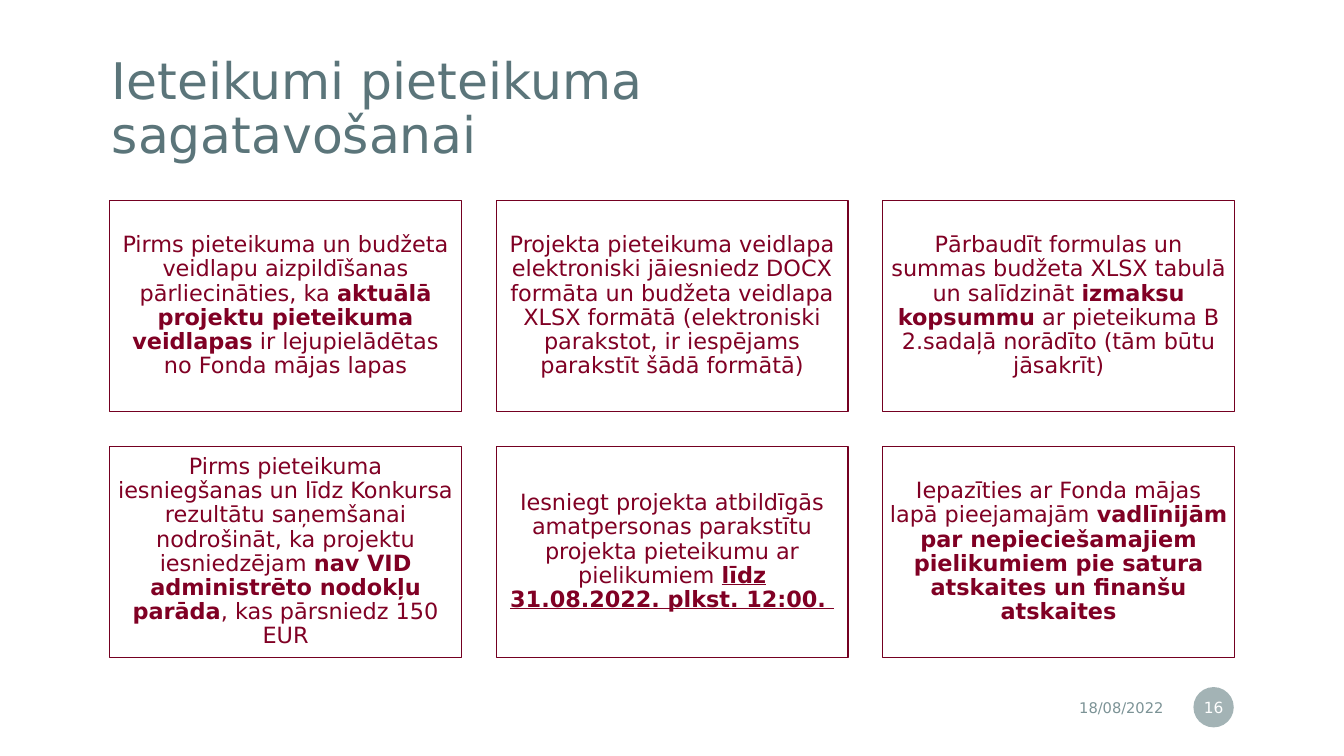
"""Build the slide of recommendations for preparing an application."""
import lxml.etree
import pptx
import pptx.dml.color
import pptx.enum.shapes
import pptx.enum.text
import pptx.oxml.ns
import pptx.util

Pt = pptx.util.Pt
ALIGN = pptx.enum.text.PP_ALIGN
SHAPES = pptx.enum.shapes.MSO_SHAPE
COLOURS = {
    "title": "5B757A",
    "footer": "7C9396",
    "card": "FFFFFF",
    "border": "740021",
    "text": "800024",
    "number": "FFFFFF",
}
CARD_LEFT, CARD_TOP = 78.4, 143.2
CARD_WIDTH, CARD_HEIGHT = 251.2, 150.7
COLUMN_STEP, ROW_STEP = 276.1, 175.7
COLUMNS = 3
CARDS = [
    [("Pirms pieteikuma un budžeta veidlapu aizpildīšanas pārliecināties, ka ", ""),
     ("aktuālā projektu pieteikuma veidlapas", "b"),
     (" ir lejupielādētas no Fonda mājas lapas", "")],
    [("Projekta pieteikuma veidlapa elektroniski jāiesniedz DOCX formāta un budžeta "
      "veidlapa XLSX formātā (elektroniski parakstot, ir iespējams parakstīt šādā "
      "formātā)", "")],
    [("Pārbaudīt formulas un summas budžeta XLSX tabulā un salīdzināt ", ""),
     ("izmaksu kopsummu", "b"),
     (" ar pieteikuma B 2.sadaļā norādīto (tām būtu jāsakrīt)", "")],
    [("Pirms pieteikuma iesniegšanas un līdz Konkursa rezultātu saņemšanai nodrošināt, "
      "ka projektu iesniedzējam ", ""),
     ("nav VID administrēto nodokļu parāda", "b"),
     (", kas pārsniedz 150 EUR", "")],
    [("Iesniegt projekta atbildīgās amatpersonas parakstītu projekta pieteikumu ar "
      "pielikumiem ", ""),
     ("līdz 31.08.2022. plkst. 12:00. ", "bu")],
    [("Iepazīties ar Fonda mājas lapā pieejamajām ", ""),
     ("vadlīnijām par nepieciešamajiem pielikumiem pie satura atskaites un finanšu "
      "atskaites", "b")],
]


def colour(name):
    return pptx.dml.color.RGBColor.from_string(COLOURS[name])


def write(box, spans, size, ink, align, insets, spacing=1.0):
    frame = box.text_frame
    frame.word_wrap = True
    frame.vertical_anchor = pptx.enum.text.MSO_ANCHOR.MIDDLE
    frame.margin_left = frame.margin_right = Pt(insets[0])
    frame.margin_top = frame.margin_bottom = Pt(insets[1])
    para = frame.paragraphs[0]
    para.alignment = align
    para.line_spacing = spacing
    para.font.name = "DejaVu Sans"
    para.font.size = Pt(size)
    para.font.color.rgb = colour(ink)
    for text, style in spans:
        span = para.add_run()
        span.text = text
        if "b" in style:
            span.font.bold = True
        if "u" in style:
            span.font.underline = True


def add_label(page, place, text, size, ink, align, insets, spacing=1.0):
    box = page.shapes.add_textbox(*map(Pt, place))
    write(box, [(text, "")], size, ink, align, insets, spacing)


def add_filled(page, kind, place, fill):
    shape = page.shapes.add_shape(kind, *map(Pt, place))
    shape.shadow.inherit = False
    shape.fill.solid()
    shape.fill.fore_color.rgb = colour(fill)
    return shape


def add_card(page, index, spans):
    row, column = divmod(index, COLUMNS)
    place = (CARD_LEFT + column * COLUMN_STEP, CARD_TOP + row * ROW_STEP,
             CARD_WIDTH, CARD_HEIGHT)
    card = add_filled(page, SHAPES.RECTANGLE, place, "card")
    card.line.color.rgb = colour("border")
    card.line.width = Pt(1)
    write(card, spans, 16, "text", ALIGN.CENTER, (4.8, 4.8), 0.9)


def add_page_number(page, number):
    badge = add_filled(page, SHAPES.OVAL, (852.5, 490.8, 28.8, 28.8), "footer")
    badge.line.fill.background()
    qn = pptx.oxml.ns.qn
    tint = badge.element.spPr.find(qn("a:solidFill")).find(qn("a:srgbClr"))
    lxml.etree.SubElement(tint, qn("a:alpha"), val="70000")
    write(badge, [(number, "")], 11, "number", ALIGN.CENTER, (1.4, 3.6))


def main():
    deck = pptx.Presentation()
    deck.slide_width, deck.slide_height = Pt(960), Pt(540)
    page = deck.slides.add_slide(deck.slide_layouts[6])
    add_label(page, (65.5, 34.6, 628.6, 88.6), "Ieteikumi pieteikuma sagatavošanai",
              36, "title", ALIGN.LEFT, (14.4, 14.4), 0.9)
    add_label(page, (621.4, 492.5, 216.7, 25.2), "18/08/2022",
              10.5, "footer", ALIGN.RIGHT, (7.2, 3.6))
    add_page_number(page, "16")
    for index, spans in enumerate(CARDS):
        add_card(page, index, spans)
    deck.save("out.pptx")


if __name__ == "__main__":
    main()
